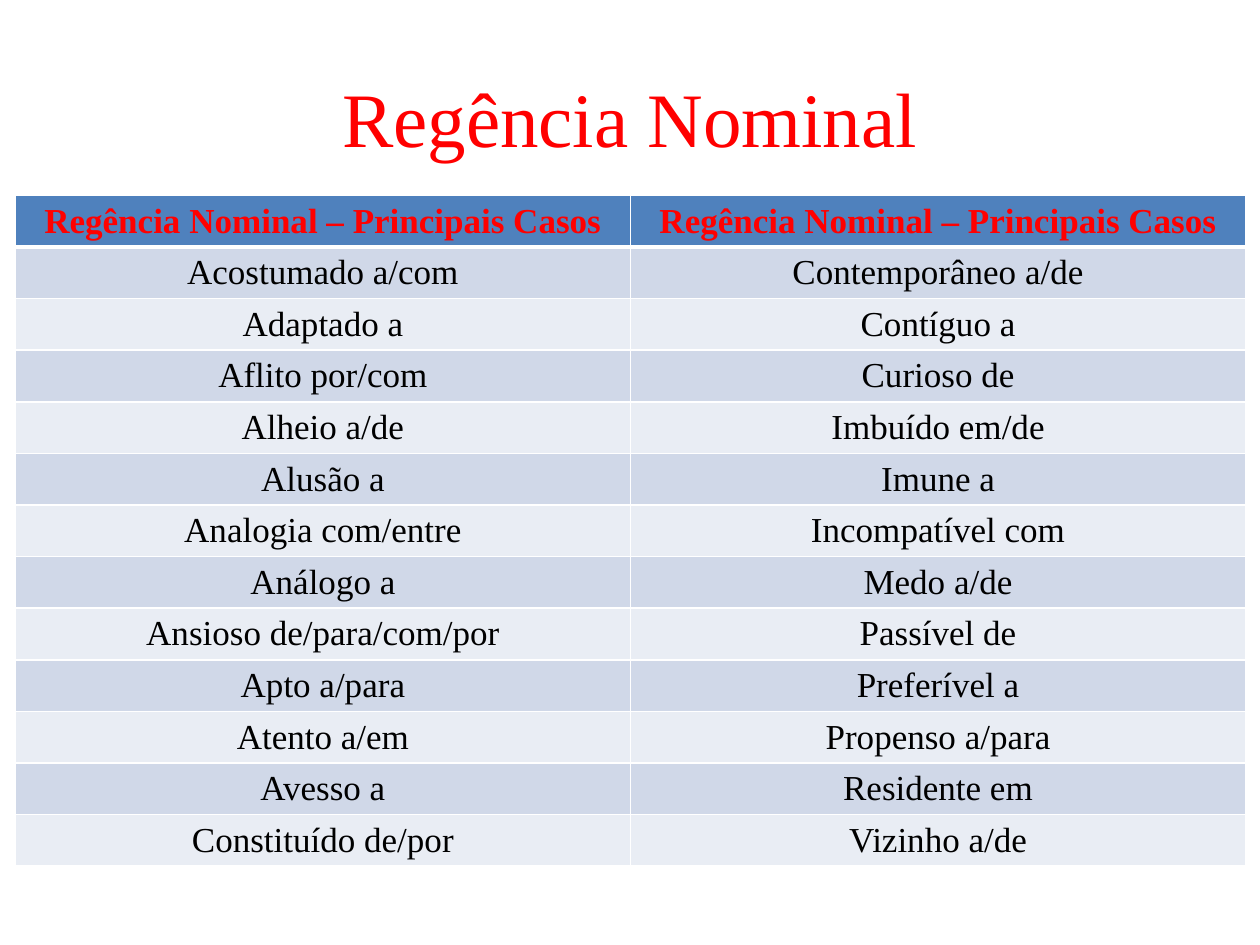
from dataclasses import dataclass

from lxml.etree import SubElement
from pptx import Presentation
from pptx.dml.color import RGBColor
from pptx.enum.text import MSO_ANCHOR, PP_ALIGN
from pptx.oxml.ns import qn
from pptx.util import Cm, Pt


@dataclass(frozen=True)
class Theme:
    """Colours, font and type sizes of the slide."""

    font: str = "Times New Roman"
    accent: str = "FF0000"
    text: str = "000000"
    header_fill: str = "4F81BD"
    band_fills: tuple = ("D0D8E8", "E9EDF4")
    border: str = "FFFFFF"
    title_size: int = 44
    table_size: int = 20
    thin_line: int = 1
    thick_line: int = 3


class SlideBuilder:
    """Holds the theme and the current slide."""

    def __init__(self, slide, theme):
        """Keep the slide and its theme."""
        self.slide = slide
        self.theme = theme

    def style_paragraph(self, paragraph, size, color, bold=False):
        """Centre a paragraph and set its font."""
        paragraph.alignment = PP_ALIGN.CENTER
        font = paragraph.font
        font.name = self.theme.font
        font.size = Pt(size)
        font.bold = bold
        font.color.rgb = RGBColor.from_string(color)

    def add_title(self, text, left, top, width, height):
        """Fill and place the title placeholder."""
        title = self.slide.shapes.title
        title.left, title.top, title.width, title.height = left, top, width, height
        title.text_frame.text = text
        title.text_frame.vertical_anchor = MSO_ANCHOR.MIDDLE
        self.style_paragraph(
            title.text_frame.paragraphs[0], self.theme.title_size, self.theme.accent
        )

    def add_border(self, cell, side, width):
        """Draw one solid border of a cell."""
        properties = cell._tc.get_or_add_tcPr()
        line = SubElement(properties, qn(f"a:ln{side}"), w=str(Pt(width)))
        fill = SubElement(line, qn("a:solidFill"))
        SubElement(fill, qn("a:srgbClr"), val=self.theme.border)

    def format_cell(self, cell, text, row_index):
        """Write a cell and format it by its row."""
        theme = self.theme
        is_header = row_index == 0
        widths = {
            "L": theme.thin_line,
            "R": theme.thin_line,
            "T": theme.thick_line if row_index == 1 else theme.thin_line,
            "B": theme.thick_line if is_header else theme.thin_line,
        }
        for side, width in widths.items():
            self.add_border(cell, side, width)
        fill = theme.header_fill if is_header else theme.band_fills[(row_index - 1) % 2]
        cell.fill.solid()
        cell.fill.fore_color.rgb = RGBColor.from_string(fill)
        cell.margin_top = cell.margin_bottom = Cm(0.1)
        cell.vertical_anchor = MSO_ANCHOR.MIDDLE
        cell.text = text
        self.style_paragraph(
            cell.text_frame.paragraphs[0],
            theme.table_size,
            theme.accent if is_header else theme.text,
            is_header,
        )

    def add_table(self, rows, left, top, width, row_height):
        """Add a banded table with equal rows and columns."""
        table = self.slide.shapes.add_table(
            len(rows), len(rows[0]), left, top, width, row_height * len(rows)
        ).table
        for row_index, texts in enumerate(rows):
            table.rows[row_index].height = row_height
            for column_index, text in enumerate(texts):
                self.format_cell(table.cell(row_index, column_index), text, row_index)


HEADING = "Regência Nominal – Principais Casos"
CASES = [
    ("Acostumado a/com", "Contemporâneo a/de"),
    ("Adaptado a", "Contíguo a"),
    ("Aflito por/com", "Curioso de"),
    ("Alheio a/de", "Imbuído em/de"),
    ("Alusão a", "Imune a"),
    ("Analogia com/entre", "Incompatível com"),
    ("Análogo a", "Medo a/de"),
    ("Ansioso de/para/com/por", "Passível de"),
    ("Apto a/para", "Preferível a"),
    ("Atento a/em", "Propenso a/para"),
    ("Avesso a", "Residente em"),
    ("Constituído de/por", "Vizinho a/de"),
]


def main():
    """Build and save the presentation."""
    presentation = Presentation()
    presentation.slide_width = Cm(25.4)
    presentation.slide_height = Cm(19.05)
    slide = presentation.slides.add_slide(presentation.slide_layouts[5])
    builder = SlideBuilder(slide, Theme())
    builder.add_title("Regência Nominal", Cm(1.27), Cm(0.76), Cm(22.86), Cm(3.18))
    builder.add_table(
        [(HEADING, HEADING), *CASES], Cm(0.31), Cm(3.94), Cm(24.8), Cm(1.04)
    )
    presentation.save("out.pptx")


if __name__ == "__main__":
    main()
